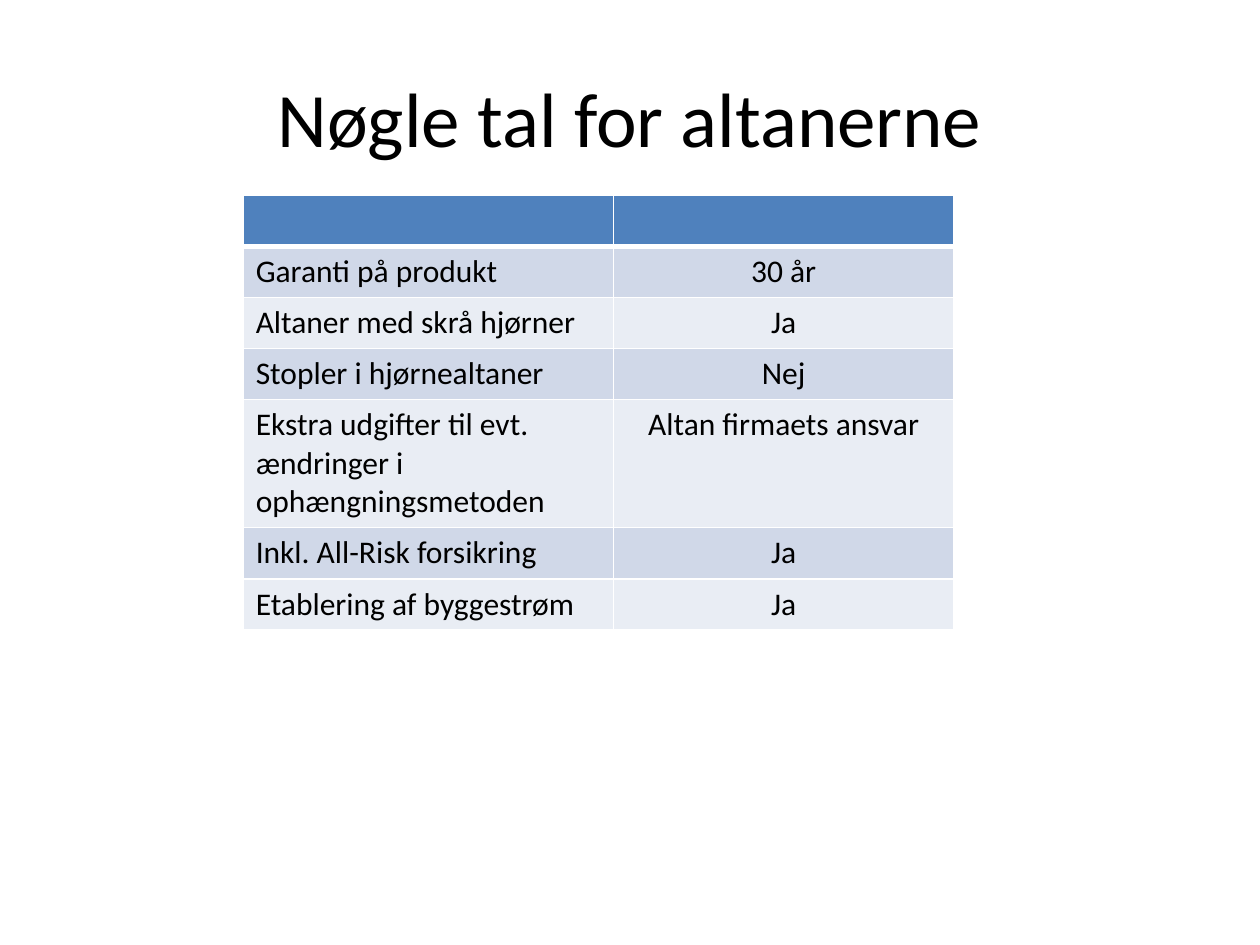
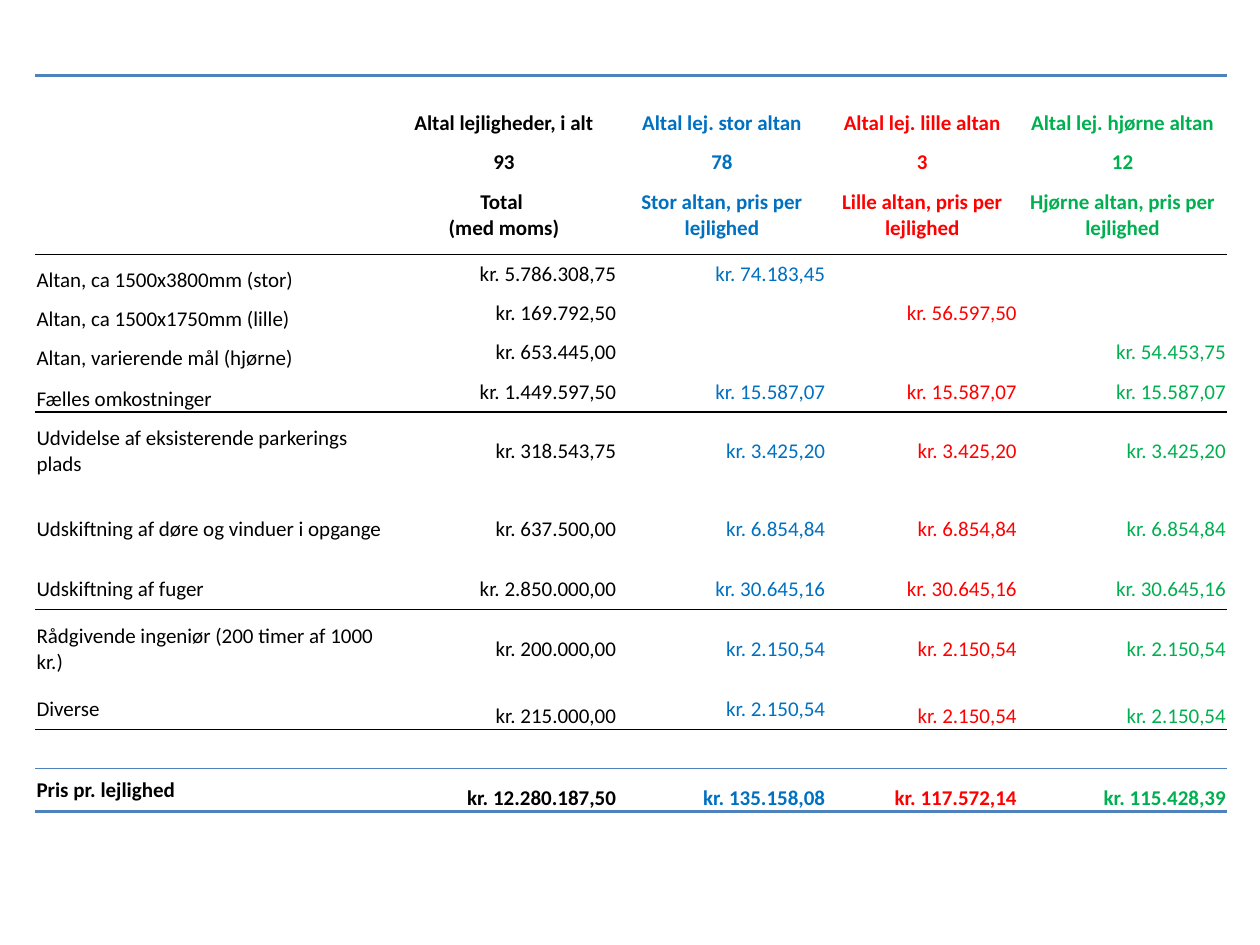
from lxml.etree import SubElement
from pptx import Presentation
from pptx.dml.color import RGBColor
from pptx.enum.text import MSO_ANCHOR, PP_ALIGN
from pptx.oxml.ns import qn
from pptx.util import Inches, Pt

FONT = "Calibri"
BLACK, WHITE, BLUE = "000000", "FFFFFF", "4F81BD"
BANDS = ["D0D8E8", "E9EDF4"]
TINTS = [BLACK, BLACK, "0070C0", "FF0000", "00B050"]
LEFT, MID, RIGHT = PP_ALIGN.LEFT, PP_ALIGN.CENTER, PP_ALIGN.RIGHT
CENTER, BOTTOM = MSO_ANCHOR.MIDDLE, MSO_ANCHOR.BOTTOM
NO_STYLE = "{2D5ABB26-0587-4C30-8999-92F81FD0307C}"

FACTS = [
    ("", ""),
    ("Garanti på produkt", "30 år"),
    ("Altaner med skrå hjørner", "Ja"),
    ("Stopler i hjørnealtaner", "Nej"),
    ("Ekstra udgifter til evt. ændringer i ophængningsmetoden", "Altan firmaets ansvar"),
    ("Inkl. All-Risk forsikring", "Ja"),
    ("Etablering af byggestrøm", "Ja"),
]

HEADS = [
    ("", "Altal lejligheder, i alt", "Altal lej. stor altan",
     "Altal lej. lille altan", "Altal lej. hjørne altan"),
    ("", "93", "78", "3", "12"),
    ("", "Total \n(med moms)", "Stor altan, pris per lejlighed",
     "Lille altan, pris per lejlighed", "Hjørne altan, pris per lejlighed"),
]


def shared(label, total, price):
    return label, total, price, price, price


COSTS = [
    ("Altan, ca 1500x3800mm (stor)", "5.786.308,75", "74.183,45", "", ""),
    ("Altan, ca 1500x1750mm (lille)", "169.792,50", "", "56.597,50", ""),
    ("Altan, varierende mål (hjørne)", "653.445,00", "", "", "54.453,75"),
    shared("Fælles omkostninger", "1.449.597,50", "15.587,07"),
    shared("Udvidelse af eksisterende parkerings plads", "318.543,75", "3.425,20"),
    shared("Udskiftning af døre og vinduer i opgange", "637.500,00", "6.854,84"),
    shared("Udskiftning af fuger", "2.850.000,00", "30.645,16"),
    shared("Rådgivende ingeniør (200 timer af 1000 kr.)", "200.000,00", "2.150,54"),
    shared("Diverse", "215.000,00", "2.150,54"),
    shared("", "", ""),
    ("Pris pr. lejlighed", "12.280.187,50", "135.158,08", "117.572,14", "115.428,39"),
]
DIVERSE, SUM = 11, 13
RULES = {0: (BLUE, 1.5), 3: (BLACK, 1), 7: (BLACK, 1), 10: (BLACK, 1),
         12: (BLACK, 1), 13: (BLUE, 0.5), 14: (BLUE, 2)}


def color(code):
    return RGBColor.from_string(code)


def write(frame, words, size=18, tint=BLACK, bold=False, align=LEFT):
    para = frame.paragraphs[0]
    para.text = words
    para.alignment = align
    for run in para.runs:
        font = run.font
        font.name, font.size, font.bold = FONT, Pt(size), bold
        font.color.rgb = color(tint)
    if not words:
        SubElement(para._p, qn("a:endParaRPr"), sz=str(size * 100))


def border(cell, **sides):
    props = cell._tc.get_or_add_tcPr()
    for side in "LRTB":
        rule = sides.get(side)
        line = SubElement(props, qn("a:ln" + side), w=str(Pt(rule[1]) if rule else 0))
        if rule:
            fill = SubElement(line, qn("a:solidFill"))
            SubElement(fill, qn("a:srgbClr"), val=rule[0])
        else:
            SubElement(line, qn("a:noFill"))


def paint(cell, tint=None):
    if tint:
        cell.fill.solid()
        cell.fill.fore_color.rgb = color(tint)
    else:
        cell.fill.background()


def grid(slide, left, top, cols, rows):
    frame = slide.shapes.add_table(len(rows), len(cols), Inches(left), Inches(top),
                                   Inches(sum(cols)), Inches(sum(rows)))
    table = frame.table
    table.first_row = table.horz_banding = False
    table._tbl.tblPr.find(qn("a:tableStyleId")).text = NO_STYLE
    for col, width in zip(table.columns, cols):
        col.width = Inches(width)
    for row, height in zip(table.rows, rows):
        row.height = Inches(height)
    return table


def title(slide, words):
    box = slide.shapes.title
    box.left, box.top = Inches(0.5), Inches(0.3)
    box.width, box.height = Inches(9), Inches(1.25)
    box.text_frame.vertical_anchor = CENTER
    write(box.text_frame, words, size=44, align=MID)


def facts(deck):
    slide = deck.slides.add_slide(deck.slide_layouts[5])
    table = grid(slide, 1.93, 1.55, [2.94, 2.7], [0.4] * 4 + [0.98] + [0.4] * 2)
    edge = (WHITE, 1)
    for r, row in enumerate(FACTS):
        for c, words in enumerate(row):
            cell = table.cell(r, c)
            write(cell.text_frame, words, align=MID if c else LEFT)
            border(cell, L=edge, R=edge, T=edge, B=edge if r else (WHITE, 3))
            paint(cell, BANDS[(r - 1) % 2] if r else BLUE)
    title(slide, "Nøgle tal for altanerne")


def anchor(r, c):
    if c == 0:
        low = 3 <= r <= 6
    else:
        low = r < 2 or r == SUM or (r == DIVERSE and c != 2)
    return BOTTOM if low else CENTER


def prices(deck):
    slide = deck.slides.add_slide(deck.slide_layouts[6])
    rows = [0.48, 0.31, 0.63, 0.31, 0.31, 0.31, 0.32,
            0.62, 0.62, 0.33, 0.62, 0.33, 0.31, 0.34]
    table = grid(slide, 0.28, 0.6, [2.82, 1.8, 1.66, 1.52, 1.66], rows)
    for r, row in enumerate(HEADS + COSTS):
        head = r < len(HEADS)
        for c, words in enumerate(row):
            cell = table.cell(r, c)
            cell.margin_left = cell.margin_right = cell.margin_top = Inches(0.01)
            cell.margin_bottom = 0
            cell.vertical_anchor = anchor(r, c)
            if c and words and not head:
                words = "kr. " + words
            align = MID if head else RIGHT if c else LEFT
            write(cell.text_frame, words, size=12, tint=TINTS[c],
                  bold=head or r == SUM, align=align)
            border(cell, T=RULES.get(r), B=RULES.get(r + 1))
            paint(cell)


def main():
    deck = Presentation()
    deck.slide_width, deck.slide_height = Inches(10), Inches(7.5)
    facts(deck)
    prices(deck)
    deck.save("out.pptx")


if __name__ == "__main__":
    main()
